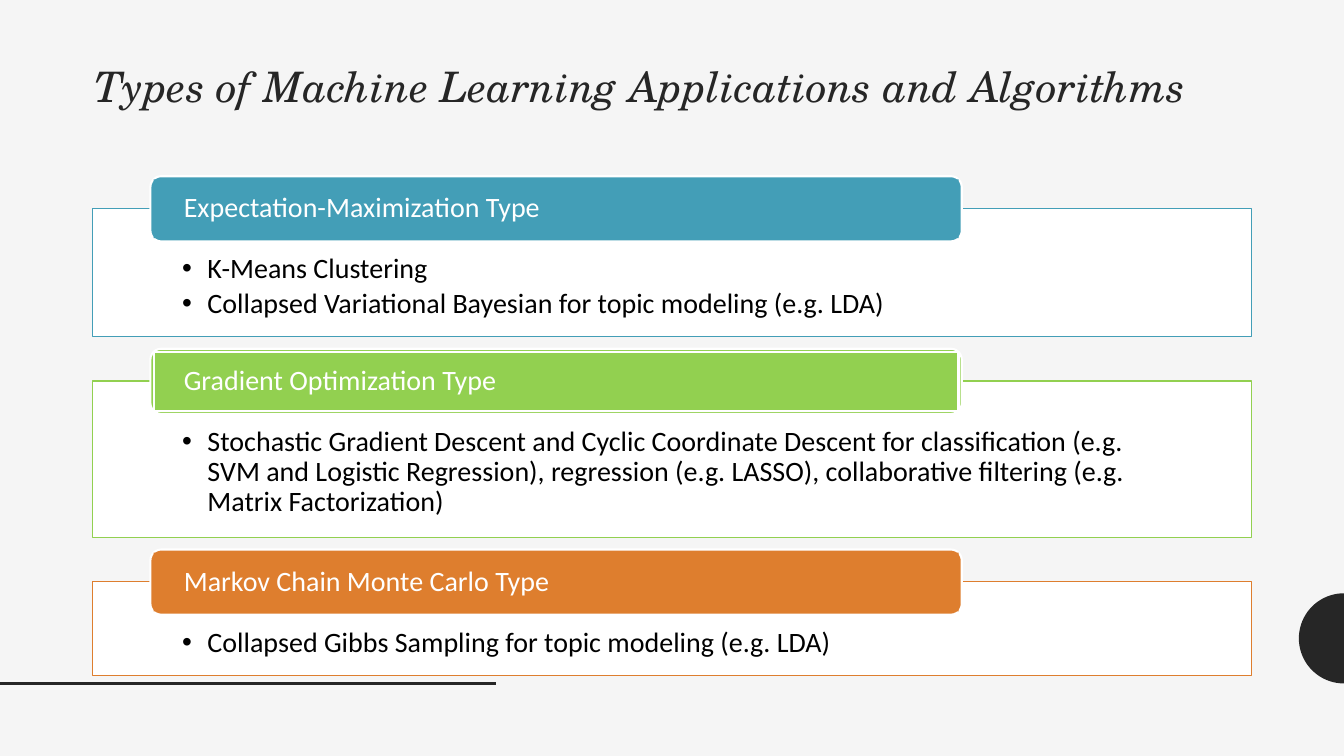
"""Build the slide on types of machine learning applications and algorithms."""
import math

import lxml.etree
import pptx
import pptx.dml.color
import pptx.enum.shapes
import pptx.enum.text
import pptx.oxml.ns
import pptx.util

Pt = pptx.util.Pt
RGBColor = pptx.dml.color.RGBColor
MSO_SHAPE = pptx.enum.shapes.MSO_SHAPE
MSO_ANCHOR = pptx.enum.text.MSO_ANCHOR
PP_ALIGN = pptx.enum.text.PP_ALIGN
qn = pptx.oxml.ns.qn

PAPER = RGBColor(0xF5, 0xF5, 0xF5)
INK = RGBColor(0x26, 0x26, 0x26)
BLACK = RGBColor(0, 0, 0)
WHITE = RGBColor(0xFF, 0xFF, 0xFF)
TEAL = RGBColor(0x43, 0x9E, 0xB7)
GREEN = RGBColor(0x92, 0xD0, 0x50)
ORANGE = RGBColor(0xDE, 0x7E, 0x2E)

WIDTH, HEIGHT = 960, 540
PANEL_LEFT, PANEL_WIDTH, PANEL_TOP, PANEL_GAP = 66, 828, 149, 31.8
LABEL_LEFT, LABEL_WIDTH, LABEL_HEIGHT, LABEL_RISE = 107.4, 579.6, 46.6, 23.1
LABEL_INSET = 2.3

TYPES = [
    ("Expectation-Maximization Type", TEAL, 91.4, None,
     ["K-Means Clustering",
      "Collapsed Variational Bayesian for topic modeling (e.g. LDA)"]),
    ("Gradient Optimization Type", GREEN, 111.6, WHITE,
     ["Stochastic Gradient Descent and Cyclic Coordinate Descent for "
      "classification (e.g. SVM and Logistic Regression), regression "
      "(e.g. LASSO), collaborative filtering (e.g. Matrix Factorization)"]),
    ("Markov Chain Monte Carlo Type", ORANGE, 67, None,
     ["Collapsed Gibbs Sampling for topic modeling (e.g. LDA)"]),
]


class Deck:
    body_font, title_font = "Calibri", "TeX Gyre Schola"
    body_size, title_size = 20, 30

    def __init__(self, slide):
        self.s = slide
        slide.background.fill.solid()
        slide.background.fill.fore_color.rgb = PAPER

    def style(self, sp, fill, line=None, weight=1):
        sp.shadow.inherit = False
        sp.fill.solid()
        sp.fill.fore_color.rgb = fill
        if line is None:
            sp.line.fill.background()
        else:
            sp.line.color.rgb = line
            sp.line.width = Pt(weight)

    def format(self, r, font, size, color):
        r.font.name, r.font.size = font, Pt(size)
        r.font.color.rgb = color

    def margins(self, tf, left, top, right, bottom):
        tf.margin_left, tf.margin_top = Pt(left), Pt(top)
        tf.margin_right, tf.margin_bottom = Pt(right), Pt(bottom)

    def box(self, kind, x, y, w, h, fill, line=None, weight=1):
        sp = self.s.shapes.add_shape(kind, Pt(x), Pt(y), Pt(w), Pt(h))
        self.style(sp, fill, line, weight)
        return sp

    def title(self, text):
        sp = self.s.shapes.title
        sp.left, sp.top, sp.width, sp.height = Pt(60), Pt(44), Pt(840), Pt(68)
        tf = sp.text_frame
        tf.text = text
        tf.word_wrap = True
        tf.vertical_anchor = MSO_ANCHOR.TOP
        p = tf.paragraphs[0]
        p.alignment, p.line_spacing = PP_ALIGN.LEFT, 0.9
        self.format(p.runs[0], self.title_font, self.title_size, INK)
        p.runs[0].font.italic = True

    def half_disc(self, cx, cy, radius, steps=40):
        points = []
        for i in range(steps + 1):
            angle = math.pi * (0.5 + i / steps)
            points.append((Pt(cx + radius * math.cos(angle)),
                           Pt(cy + radius * math.sin(angle))))
        builder = self.s.shapes.build_freeform(*points[0])
        builder.add_line_segments(points[1:], close=True)
        self.style(builder.convert_to_shape(), INK)

    def rule(self, x1, x2, y):
        sp = self.s.shapes.add_connector(
            pptx.enum.shapes.MSO_CONNECTOR.STRAIGHT, Pt(x1), Pt(y), Pt(x2), Pt(y))
        sp.line.color.rgb = INK
        sp.line.width = Pt(2)
        lxml.etree.SubElement(sp.element.spPr, qn("a:effectLst"))

    def panel(self, y, h, color, items):
        sp = self.box(MSO_SHAPE.RECTANGLE, PANEL_LEFT, y, PANEL_WIDTH, h, WHITE, color)
        tf = sp.text_frame
        tf.text = "\n".join(items)
        tf.word_wrap = True
        tf.vertical_anchor = MSO_ANCHOR.TOP
        self.margins(tf, 64.2, 33, 64.2, 11.4)
        for p in tf.paragraphs:
            p.alignment, p.line_spacing, p.space_after = PP_ALIGN.LEFT, 0.9, Pt(3)
            p.level = 1
            pPr = p._p.get_or_add_pPr()
            pPr.set("marL", str(Pt(18)))
            pPr.set("indent", str(-Pt(18)))
            lxml.etree.SubElement(pPr, qn("a:buFont")).set("typeface", "Arial")
            lxml.etree.SubElement(pPr, qn("a:buChar")).set("char", "•")
            self.format(p.runs[0], self.body_font, self.body_size, BLACK)

    def label(self, y, text, color, border):
        self.box(MSO_SHAPE.ROUNDED_RECTANGLE, LABEL_LEFT, y, LABEL_WIDTH,
                 LABEL_HEIGHT, color, WHITE, 1.5)
        sp = self.box(MSO_SHAPE.RECTANGLE, LABEL_LEFT + LABEL_INSET, y + LABEL_INSET,
                      LABEL_WIDTH - 2 * LABEL_INSET, LABEL_HEIGHT - 2 * LABEL_INSET,
                      color, border, 1.5)
        tf = sp.text_frame
        tf.text = text
        tf.word_wrap = True
        tf.vertical_anchor = MSO_ANCHOR.MIDDLE
        self.margins(tf, 21.6, 0, 21.6, 0)
        p = tf.paragraphs[0]
        p.alignment, p.line_spacing = PP_ALIGN.LEFT, 0.9
        self.format(p.runs[0], self.body_font, self.body_size, WHITE)


def main():
    prs = pptx.Presentation()
    prs.slide_width, prs.slide_height = Pt(WIDTH), Pt(HEIGHT)
    deck = Deck(prs.slides.add_slide(prs.slide_layouts[5]))
    deck.half_disc(WIDTH, 456, 32.2)
    deck.rule(0, 354, 488)
    deck.title("Types of Machine Learning Applications and Algorithms")
    y = PANEL_TOP
    for name, color, height, border, items in TYPES:
        deck.panel(y, height, color, items)
        deck.label(y - LABEL_RISE, name, color, border)
        y += height + PANEL_GAP
    prs.save("out.pptx")


if __name__ == "__main__":
    main()
